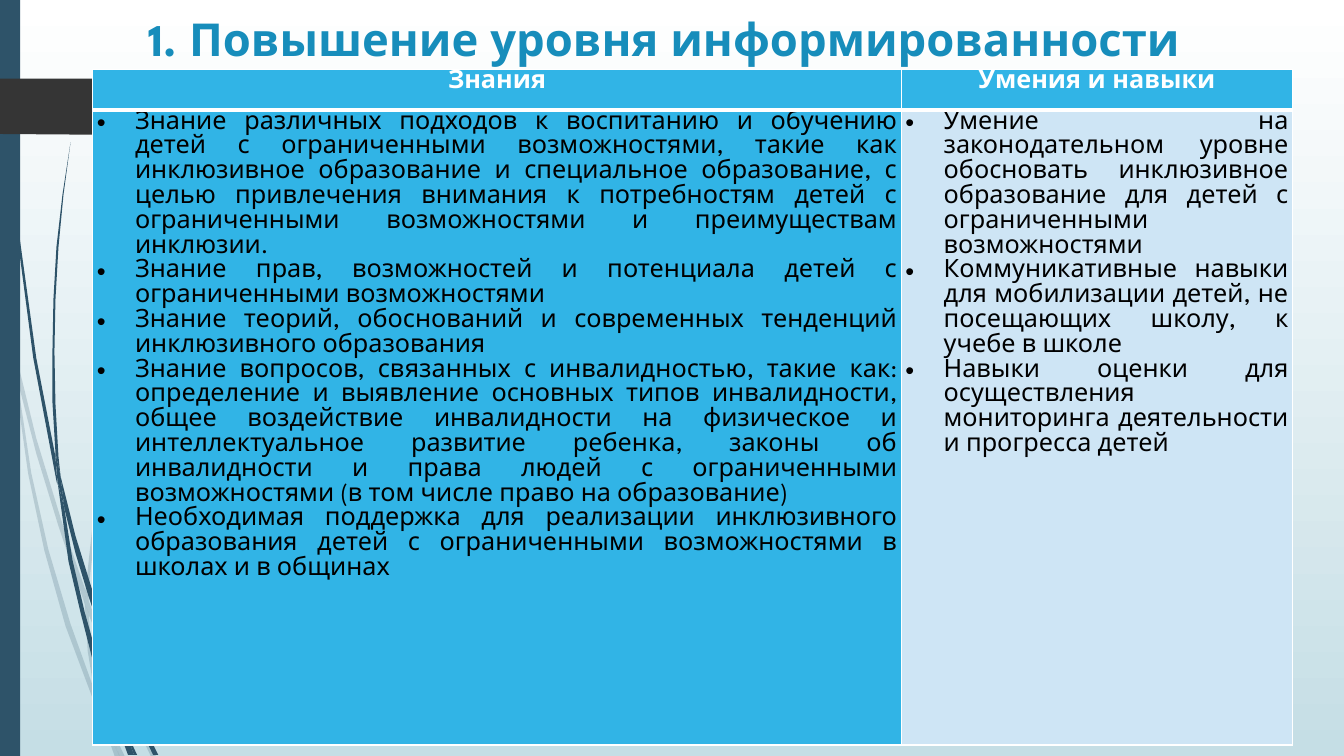
from lxml import etree
from pptx import Presentation
from pptx.dml.color import RGBColor
from pptx.enum.shapes import MSO_SHAPE
from pptx.enum.text import MSO_ANCHOR, PP_ALIGN
from pptx.oxml.ns import qn
from pptx.util import Inches, Pt

RECT = MSO_SHAPE.RECTANGLE
MIDDLE = MSO_ANCHOR.MIDDLE
CENTER, JUSTIFY = PP_ALIGN.CENTER, PP_ALIGN.JUSTIFY
FONT = "League Spartan"
COLORS = {"white": "FFFFFF", "mist": "C5DEE5", "navy": "2E5369", "dark": "353535",
          "title": "178DBB", "blue": "31B4E6", "pale": "CEE5F5", "black": "000000"}


def rgb(name):
    return RGBColor.from_string(COLORS[name])


def write(frame, texts, size=18, color="black", bold=False, align=JUSTIFY,
          space=1.07, bullet=False):
    frame.word_wrap = True
    for i, text in enumerate(texts):
        para = frame.paragraphs[0] if i == 0 else frame.add_paragraph()
        para.alignment = align
        para.line_spacing = space
        run = para.add_run()
        run.text = text
        font = run.font
        font.name, font.size, font.bold = FONT, Pt(size), bold
        font.color.rgb = rgb(color)
        if bullet:
            props = para._p.get_or_add_pPr()
            props.set("marL", str(Inches(0.38)))
            props.set("indent", str(-Inches(0.38)))
            etree.SubElement(props, qn("a:buFont"), typeface="Arial")
            etree.SubElement(props, qn("a:buChar"), char="•")


deck = Presentation()
deck.slide_width, deck.slide_height = Inches(13.33), Inches(7.5)
slide = deck.slides.add_slide(deck.slide_layouts[6])
shapes = slide.shapes

# Background
back = slide.background.fill
back.gradient()
back.gradient_angle = 270
for stop, name in zip(back.gradient_stops, ("white", "mist")):
    stop.color.rgb = rgb(name)

# Grass blades: outline points in inches
faint = [
    [(0.11, 3.5), (0.09, 3.22), (0, 2.82), (0, 2.99), (0.1, 3.44)],
    [(0.58, 5.22), (0.84, 5.99), (0.85, 5.86), (0.62, 5.2), (0.36, 4.35), (0.14, 3.45),
     (0.17, 3.76), (0.36, 4.5)],
    [(0.92, 6.07), (0.88, 5.96), (0.88, 6.1), (1.23, 6.94), (1.5, 7.51), (1.55, 7.51),
     (1.27, 6.92)],
    [(1.19, 7.51), (1.24, 7.51), (1.05, 7.11)],
    [(0.93, 6.83), (0.7, 6.19), (0.48, 5.45), (0.31, 4.69), (0.17, 3.76), (0.11, 3.5),
     (0.28, 4.7), (0.44, 5.46), (0.65, 6.21), (0.92, 6.93), (1.01, 7.14), (0.99, 7.07)],
    [(0.84, 5.99), (0.87, 6.46), (0.93, 6.83), (0.96, 6.92), (1.05, 7.11), (1.03, 7.06),
     (0.91, 6.46), (0.88, 6.1), (0.88, 6.08)],
    [(0.88, 5.84), (0.95, 5.2), (1.1, 4.62), (1.6, 3.49), (2.29, 2.45), (2.68, 1.98),
     (3.12, 1.54), (3.12, 1.53), (2.68, 1.97), (2.28, 2.44), (1.58, 3.48), (1.07, 4.61),
     (0.92, 5.2), (0.85, 5.84), (0.85, 5.86), (0.88, 5.96)],
    [(1.01, 7.14), (1.14, 7.51), (1.19, 7.51)],
    [(0.88, 6.08), (0.88, 5.96), (0.85, 5.86), (0.84, 5.99)],
    [(0.96, 6.92), (0.93, 6.83), (0.99, 7.07), (1.01, 7.14), (1.19, 7.51), (1.05, 7.11)],
]
solid = [
    [(0.07, 1.1), (0.17, 2.33), (0.33, 3.55), (0.56, 4.77), (0.57, 4.81), (0.55, 4.53),
     (0.36, 3.55), (0.19, 2.32), (0.08, 1.09), (0.05, 0.48), (0.04, 0), (0.03, 0),
     (0.04, 0.48)],
    [(0.88, 5.92), (1.06, 6.45), (1.06, 6.31), (0.93, 5.9), (0.75, 5.32), (0.6, 4.72),
     (0.64, 5.05), (0.75, 5.49)],
    [(1.13, 6.49), (1.1, 6.41), (1.11, 6.56), (1.32, 7.08), (1.52, 7.49), (1.57, 7.49),
     (1.36, 7.06)],
    [(1.1, 6.91), (0.98, 6.57), (0.84, 6.07), (0.72, 5.56), (0.64, 5.05), (0.57, 4.77),
     (0.68, 5.57), (0.8, 6.08), (0.93, 6.59), (1.11, 7.08), (1.17, 7.22), (1.16, 7.17)],
    [(0.6, 4.72), (0.58, 4.53), (0.55, 4.01), (0.54, 3.49), (0.55, 2.97), (0.58, 2.45),
     (0.63, 1.93), (0.7, 1.41), (0.62, 1.93), (0.56, 2.45), (0.53, 2.97), (0.52, 3.49),
     (0.52, 3.99), (0.55, 4.49)],
    [(1.33, 7.49), (1.36, 7.49), (1.22, 7.19)],
    [(0.57, 4.77), (0.64, 5.05), (0.6, 4.72), (0.55, 4.49), (0.55, 4.53)],
    [(1.11, 6.33), (1.25, 5.52), (1.58, 4.76), (2.05, 4.06), (2.31, 3.74), (2.61, 3.44),
     (2.6, 3.44), (2.31, 3.73), (2.04, 4.05), (1.56, 4.74), (1.22, 5.51), (1.06, 6.31),
     (1.1, 6.41)],
    [(1.17, 7.22), (1.27, 7.49), (1.31, 7.49)],
    [(1.06, 6.45), (1.1, 6.91), (1.16, 7.06), (1.22, 7.19), (1.21, 7.16), (1.11, 6.56),
     (1.09, 6.51)],
    [(1.06, 6.45), (1.09, 6.51), (1.11, 6.56), (1.1, 6.41), (1.06, 6.31)],
    [(1.16, 7.06), (1.1, 6.91), (1.16, 7.17), (1.17, 7.22), (1.3, 7.49), (1.33, 7.49),
     (1.22, 7.19)],
]
tag = [(1.73, 1.08), (1.48, 1.33), (1.46, 1.34), (1.36, 1.34), (0, 1.33), (0, 0.78),
       (1.46, 0.78), (1.48, 0.79), (1.73, 1.04), (1.74, 1.06)]

# Side bar, blades and page tag
bar = shapes.add_shape(RECT, 0, 0, Inches(0.2), Inches(7.5))
bar.shadow.inherit = False
bar.fill.solid()
bar.fill.fore_color.rgb = rgb("navy")
bar.line.fill.background()

for group, name, alpha in ((faint, "navy", 20), (solid, "navy", 100), ([tag], "dark", 100)):
    for outline in group:
        points = [(Inches(x), Inches(y)) for x, y in outline]
        pen = shapes.build_freeform(*points[0])
        pen.add_line_segments(points[1:])
        blade = pen.convert_to_shape()
        blade.shadow.inherit = False
        blade.fill.solid()
        blade.fill.fore_color.rgb = rgb(name)
        blade.line.fill.background()
        if alpha < 100:
            tint = blade._element.spPr.find(qn("a:solidFill"))[0]
            etree.SubElement(tint, qn("a:alpha"), val=str(alpha * 1000))

# The bar covers the blades
shapes._spTree.remove(bar._element)
shapes._spTree.insert(-1, bar._element)

# Title
title = shapes.add_textbox(Inches(1.27), 0, Inches(11.02), Inches(0.69)).text_frame
title.vertical_anchor = MIDDLE
title.margin_top, title.margin_right = Inches(0.13), Inches(0.48)
write(title, ["1. Повышение уровня информированности"], size=32.4, color="title",
      bold=True, align=CENTER, space=1)

# Table
heads = ["Знания", "Умения и навыки"]
knows = [
    "Знание различных подходов к воспитанию и обучению детей с ограниченными возможностями, такие как инклюзивное образование и специальное образование, с целью привлечения внимания к потребностям детей с ограниченными возможностями и преимуществам инклюзии.",
    "Знание прав, возможностей и потенциала детей с ограниченными возможностями",
    "Знание теорий, обоснований и современных тенденций инклюзивного образования",
    "Знание вопросов, связанных с инвалидностью, такие как: определение и выявление основных типов инвалидности, общее воздействие инвалидности на физическое и интеллектуальное развитие ребенка, законы об инвалидности и права людей с ограниченными возможностями (в том числе право на образование)",
    "Необходимая поддержка для реализации инклюзивного образования детей с ограниченными возможностями в школах и в общинах",
]
skills = [
    "Умение на законодательном уровне обосновать инклюзивное образование для детей с ограниченными возможностями",
    "Коммуникативные навыки для мобилизации детей, не посещающих школу, к учебе в школе",
    "Навыки оценки для осуществления мониторинга деятельности и прогресса детей",
]
table = shapes.add_table(2, 2, Inches(0.92), Inches(0.69), Inches(11.9), Inches(6.7)).table
for col, width in zip(table.columns, (8.02, 3.88)):
    col.width = Inches(width)
for row, height in zip(table.rows, (0.4, 6.3)):
    row.height = Inches(height)

head = dict(color="white", bold=True, align=CENTER)
body = dict(bullet=True)
cells = [(0, 0, heads[:1], "blue", head), (0, 1, heads[1:], "blue", head),
         (1, 0, knows, "blue", body), (1, 1, skills, "pale", body)]
for r, c, texts, fill, style in cells:
    cell = table.cell(r, c)
    cell.margin_left = cell.margin_right = Inches(0.04)
    cell.margin_top = cell.margin_bottom = 0
    write(cell.text_frame, texts, **style)
    props = cell._tc.get_or_add_tcPr()
    for side in ("lnL", "lnR", "lnT", "lnB"):
        thick = (r, side) in ((0, "lnB"), (1, "lnT"))
        edge = etree.SubElement(props, qn("a:" + side), w=str(Pt(3 if thick else 1)))
        paint = etree.SubElement(edge, qn("a:solidFill"))
        etree.SubElement(paint, qn("a:srgbClr"), val=COLORS["white"])
    cell.fill.solid()
    cell.fill.fore_color.rgb = rgb(fill)

deck.save("out.pptx")
